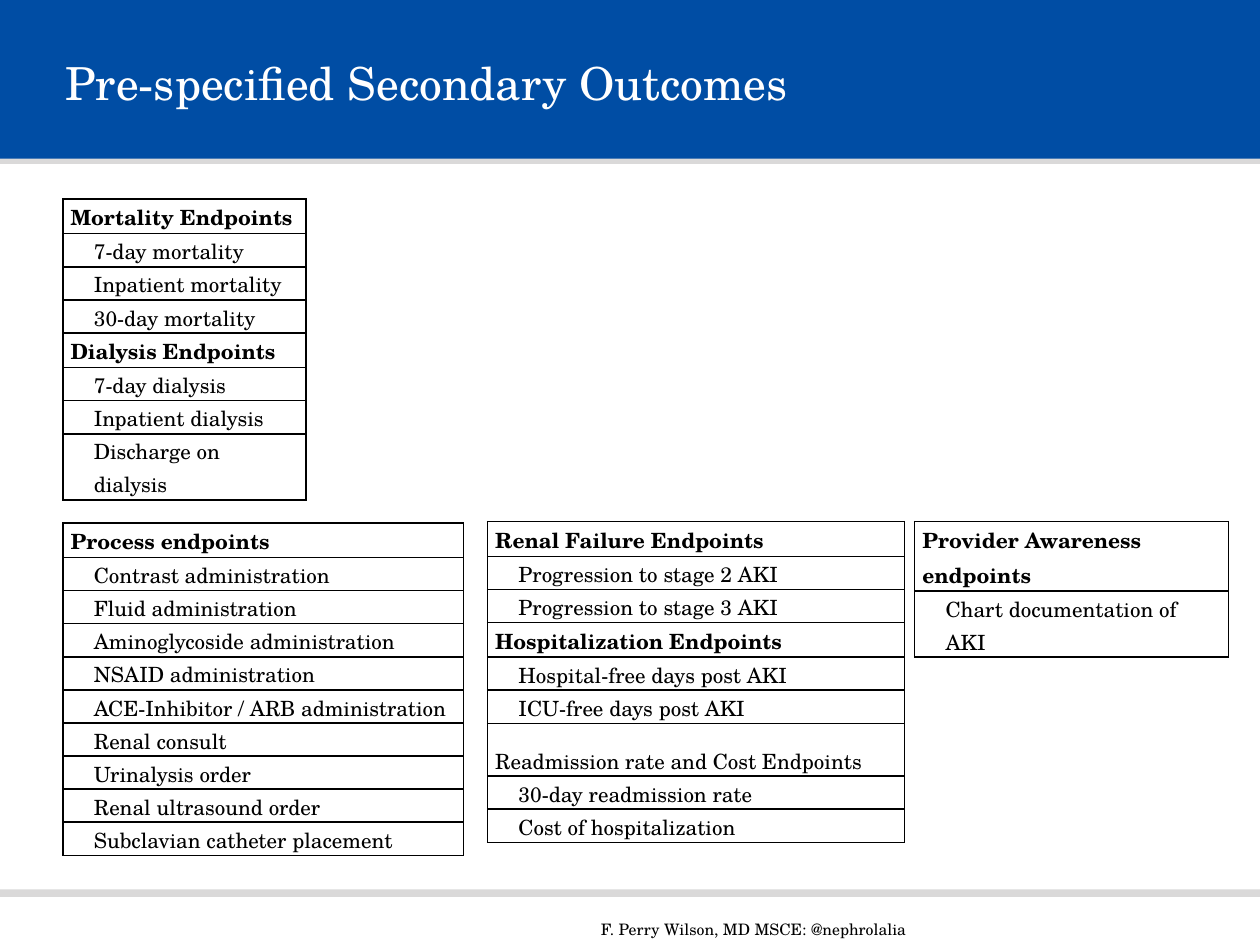
from dataclasses import dataclass

from lxml import etree
from pptx import Presentation
from pptx import util as u
from pptx.dml.color import RGBColor
from pptx.enum import shapes, text
from pptx.oxml.ns import qn

BLUE = RGBColor(0x00, 0x4D, 0xA4)
GREY = RGBColor(0xDA, 0xD9, 0xD9)
BLACK = RGBColor(0, 0, 0)
WHITE = RGBColor(0xFF, 0xFF, 0xFF)

COLUMNS, ROWS = 10, 7.5  # slide grid
LINE_ROW = 0.21  # height of a one-line table row, in grid rows


@dataclass
class Entry:
    content: str
    heading: bool = False
    bold: bool = False
    lines: int = 1


def section(title, *items, bold=True, lines=1):
    """A heading followed by its indented endpoints."""
    endpoints = [Entry(item, lines=item.count("\n") + 1) for item in items]
    return [Entry(title, True, bold, lines)] + endpoints


class Page:
    font = "TeX Gyre Schola"

    def __init__(self, deck):
        self.deck = deck
        self.page = deck.slides.add_slide(deck.slide_layouts[5])

    def place(self, left, top, width, height):
        across, down = self.deck.slide_width / COLUMNS, self.deck.slide_height / ROWS
        return [u.Emu(round(n)) for n in
                (left * across, top * down, width * across, height * down)]

    def style(self, para, size, color, bold=False):
        para.font.name, para.font.size = self.font, u.Pt(size)
        para.font.color.rgb, para.font.bold = color, bold
        para.alignment = text.PP_ALIGN.LEFT

    def band(self, top, height, color):
        bar = self.page.shapes.add_shape(
            shapes.MSO_SHAPE.RECTANGLE, *self.place(0, top, COLUMNS, height))
        bar.shadow.inherit = False
        bar.fill.solid()
        bar.fill.fore_color.rgb = color
        bar.line.fill.background()

    def title(self, content, *area):
        title = self.page.shapes.title
        title.left, title.top, title.width, title.height = self.place(*area)
        frame = title.text_frame
        frame.text = content
        frame.vertical_anchor = text.MSO_ANCHOR.MIDDLE
        self.style(frame.paragraphs[0], 26, WHITE)
        title.element.getparent().append(title.element)  # in front of the bands

    def label(self, content, *area):
        box = self.page.shapes.add_textbox(*self.place(*area))
        box.text_frame.word_wrap = True
        box.text_frame.text = content
        self.style(box.text_frame.paragraphs[0], 9, BLACK)

    def table(self, left, top, width, entries):
        height = LINE_ROW * sum(entry.lines for entry in entries)
        table = self.page.shapes.add_table(
            len(entries), 1, *self.place(left, top, width, height)).table
        table.first_row = table.horz_banding = False
        for row, entry in zip(table.rows, entries):
            row.height = self.place(0, 0, 0, LINE_ROW * entry.lines)[3]
            self.cell(row.cells[0], entry)

    def cell(self, cell, entry):
        cell.margin_left = cell.margin_right = u.Inches(0.06)
        cell.margin_top = cell.margin_bottom = 0
        cell.vertical_anchor = text.MSO_ANCHOR.BOTTOM
        cell.text = entry.content
        for para in cell.text_frame.paragraphs:
            if not entry.heading:
                para._p.get_or_add_pPr().set("marL", str(u.Inches(0.185)))
            para.line_spacing = 1.07
            self.style(para, 12, BLACK, entry.bold)
        properties = cell._tc.get_or_add_tcPr()
        for side in ("a:lnL", "a:lnR", "a:lnT", "a:lnB"):
            line = etree.SubElement(properties, qn(side), w=str(u.Pt(1)))
            fill = etree.SubElement(line, qn("a:solidFill"))
            etree.SubElement(fill, qn("a:srgbClr"), val=str(BLACK))
        cell.fill.background()


def main():
    deck = Presentation()
    deck.slide_width, deck.slide_height = u.Inches(10), u.Inches(7.5)
    page = Page(deck)

    # Header and footer
    page.band(1.05, 0.25, GREY)
    page.band(-0.01, 1.27, BLUE)
    page.band(7.06, 0.06, GREY)
    page.label("F. Perry Wilson, MD MSCE: @nephrolalia", 4.67, 7.25, 2.92, 0.25)
    page.title("Pre-specified Secondary Outcomes", 0.42, 0.08, 7.71, 1.15)

    # Mortality and dialysis
    page.table(0.5, 1.58, 1.93, section(
        "Mortality Endpoints",
        "7-day mortality", "Inpatient mortality", "30-day mortality",
    ) + section(
        "Dialysis Endpoints",
        "7-day dialysis", "Inpatient dialysis", "Discharge on\ndialysis",
    ))

    # Renal failure, hospitalization and cost
    page.table(3.87, 4.14, 3.31, section(
        "Renal Failure Endpoints",
        "Progression to stage 2 AKI", "Progression to stage 3 AKI",
    ) + section(
        "Hospitalization Endpoints",
        "Hospital-free days post AKI", "ICU-free days post AKI",
    ) + section(
        "Readmission rate and Cost Endpoints",
        "30-day readmission rate", "Cost of hospitalization",
        bold=False, lines=2,
    ))

    # Process of care
    page.table(0.5, 4.15, 3.18, section(
        "Process endpoints",
        "Contrast administration", "Fluid administration",
        "Aminoglycoside administration", "NSAID administration",
        "ACE-Inhibitor / ARB administration", "Renal consult",
        "Urinalysis order", "Renal ultrasound order",
        "Subclavian catheter placement",
    ))

    # Provider awareness
    page.table(7.26, 4.14, 2.49, section(
        "Provider Awareness endpoints", "Chart documentation of\nAKI", lines=2,
    ))

    deck.save("out.pptx")


if __name__ == "__main__":
    main()
